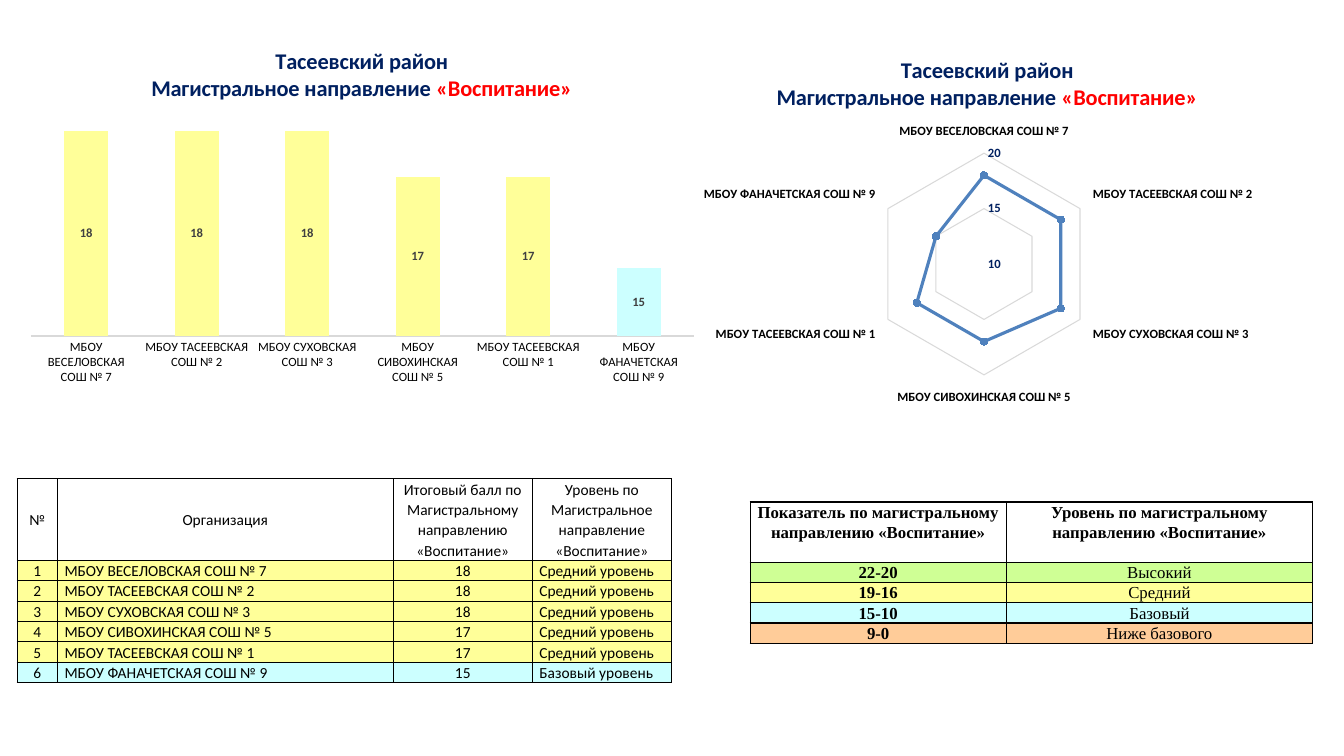
from lxml import etree
from pptx import Presentation
from pptx.chart.data import CategoryChartData
from pptx.dml.color import RGBColor
from pptx.enum import chart as ch, text
from pptx.oxml import parse_xml
from pptx.oxml.ns import nsdecls, qn
from pptx.util import Inches, Pt

YELLOW, CYAN, GREEN, ORANGE = "FFFF99", "CCFFFF", "CFFF95", "FFCC99"
NAVY, BLUE, GREY = "002060", "4F81BD", "D9D9D9"
SCHOOLS = [
    ("МБОУ ВЕСЕЛОВСКАЯ СОШ № 7", 18),
    ("МБОУ ТАСЕЕВСКАЯ СОШ № 2", 18),
    ("МБОУ СУХОВСКАЯ СОШ № 3", 18),
    ("МБОУ СИВОХИНСКАЯ СОШ № 5", 17),
    ("МБОУ ТАСЕЕВСКАЯ СОШ № 1", 17),
    ("МБОУ ФАНАЧЕТСКАЯ СОШ № 9", 15),
]
LEVELS = [("22-20", "Высокий", GREEN), ("19-16", "Средний", YELLOW),
          ("15-10", "Базовый", CYAN), ("9-0", "Ниже базового", ORANGE)]


def rgb(value):
    return RGBColor.from_string(value)


def level(score):
    return ("Средний уровень", YELLOW) if score >= 16 else ("Базовый уровень", CYAN)


def set_font(font, size, color, bold=False, name="Calibri"):
    font.size, font.bold, font.name = Pt(size), bold, name
    font.color.rgb = rgb(color)


def set_line(line, color, width):
    line.color.rgb = rgb(color)
    line.width = Pt(width)


def layout(x, y, w=None, h=None):
    target = '<c:layoutTarget val="inner"/>' if w else ""
    size = f'<c:w val="{w}"/><c:h val="{h}"/>' if w else ""
    return parse_xml(
        f'<c:layout {nsdecls("c")}><c:manualLayout>{target}'
        '<c:xMode val="edge"/><c:yMode val="edge"/>'
        f'<c:x val="{x}"/><c:y val="{y}"/>{size}</c:manualLayout></c:layout>')


def place(parent, before, element):
    for old in parent.findall(qn("c:layout")):
        parent.remove(old)
    if before is None:
        parent.insert(0, element)
    else:
        before.addnext(element)


def add_score_chart(s, kind, box, title_at, plot_box):
    data = CategoryChartData()
    data.categories = [name for name, _ in SCHOOLS]
    data.add_series("Балл", [score for _, score in SCHOOLS])
    chart = s.shapes.add_chart(kind, *map(Inches, box), data).chart
    set_font(chart.font, 10, "000000")
    chart.has_legend = False

    tf = chart.chart_title.text_frame
    lines = [[("Тасеевский район", NAVY)],
             [("Магистральное направление ", NAVY), ("«Воспитание»", "FF0000")]]
    for i, runs in enumerate(lines):
        p = tf.add_paragraph() if i else tf.paragraphs[0]
        p.alignment = text.PP_ALIGN.CENTER
        for words, color in runs:
            r = p.add_run()
            r.text = words
            set_font(r.font, 16, color, True)
    chart.chart_title.include_in_layout = False
    title = chart.chart_title._element
    place(title, title.find(qn("c:tx")), layout(*title_at))
    place(chart.plots[0]._element.getparent(), None, layout(*plot_box))

    axis = chart.category_axis
    axis.major_tick_mark = ch.XL_TICK_MARK.NONE
    axis.has_major_gridlines = False
    chart.value_axis.major_tick_mark = ch.XL_TICK_MARK.NONE
    return chart


def add_bars(s, box):
    chart = add_score_chart(s, ch.XL_CHART_TYPE.COLUMN_STACKED, box,
                            (0.19, 0.05), (0.02, 0.29, 0.96, 0.56))
    set_font(chart.category_axis.tick_labels.font, 9, "000000")
    set_line(chart.category_axis.format.line, GREY, 1)
    axis = chart.value_axis
    axis.minimum_scale, axis.maximum_scale = 13.5, 18
    axis.has_major_gridlines = False
    axis.visible = False
    plot = chart.plots[0]
    plot.gap_width, plot.overlap = 150, 100
    plot.vary_by_categories = False
    series = plot.series[0]
    for i, (_, score) in enumerate(SCHOOLS):
        fill = series.points[i].format.fill
        fill.solid()
        fill.fore_color.rgb = rgb(level(score)[1])
    labels = series.data_labels
    labels.show_value = True
    labels.position = ch.XL_LABEL_POSITION.CENTER
    set_font(labels.font, 9, "404040", True)


def add_radar(s, box):
    chart = add_score_chart(s, ch.XL_CHART_TYPE.RADAR_MARKERS, box,
                            (0.18, 0.05), (0.33, 0.3, 0.34, 0.55))
    set_font(chart.category_axis.tick_labels.font, 9, "000000", True)
    set_line(chart.category_axis.format.line, GREY, 0.75)
    axis = chart.value_axis
    axis.minimum_scale, axis.maximum_scale, axis.major_unit = 10, 20, 5
    axis.has_major_gridlines = True
    set_line(axis.major_gridlines.format.line, GREY, 0.75)
    axis.format.line.fill.background()
    set_font(axis.tick_labels.font, 9, NAVY, True)
    series = chart.plots[0].series[0]
    series.smooth = False
    set_line(series.format.line, BLUE, 2.25)
    marker = series.marker
    marker.style, marker.size = ch.XL_MARKER_STYLE.CIRCLE, 5
    marker.format.fill.solid()
    marker.format.fill.fore_color.rgb = rgb(BLUE)
    set_line(marker.format.line, BLUE, 0.75)


def add_borders(cell):
    tcPr = cell._tc.get_or_add_tcPr()
    for i, side in enumerate(("lnL", "lnR", "lnT", "lnB")):
        ln = etree.Element(qn(f"a:{side}"), w=str(Pt(1)))
        fill = etree.SubElement(ln, qn("a:solidFill"))
        etree.SubElement(fill, qn("a:srgbClr"), val="000000")
        tcPr.insert(i, ln)


def add_grid(s, box, widths, header_height, rows, fills, size, font, bold, centred, middle):
    table = s.shapes.add_table(len(rows), len(widths), *map(Inches, box)).table
    table.first_row = table.horz_banding = False
    for column, width in zip(table.columns, widths):
        column.width = Inches(width)
    for i, (values, color) in enumerate(zip(rows, fills)):
        table.rows[i].height = Inches(0.2 if i else header_height)
        for j, value in enumerate(values):
            cell = table.cell(i, j)
            cell.margin_left = cell.margin_right = Inches(0.07)
            cell.margin_top = cell.margin_bottom = 0
            if middle(i, j):
                cell.vertical_anchor = text.MSO_ANCHOR.MIDDLE
            if color:
                cell.fill.solid()
                cell.fill.fore_color.rgb = rgb(color)
            else:
                cell.fill.background()
            cell.text = value
            p = cell.text_frame.paragraphs[0]
            p.line_spacing = 1.07
            p.alignment = text.PP_ALIGN.CENTER if centred(i, j) else text.PP_ALIGN.LEFT
            set_font(p.font, size, "000000", bold(i, j), font)
            add_borders(cell)


def add_school_table(s, box):
    rows = [("№", "Организация", "Итоговый балл по Магистральному направлению «Воспитание»",
             "Уровень по Магистральное направление «Воспитание»")]
    rows += [(str(i), name, str(score), level(score)[0])
             for i, (name, score) in enumerate(SCHOOLS, 1)]
    fills = [None] + [level(score)[1] for _, score in SCHOOLS]
    add_grid(s, box, (0.4, 3.33, 1.38, 1.38), 0.81, rows, fills, 11, "Calibri",
             bold=lambda i, j: False,
             centred=lambda i, j: i == 0 or j in (0, 2),
             middle=lambda i, j: True)


def add_level_table(s, box):
    rows = [("Показатель по магистральному направлению «Воспитание»",
             "Уровень по магистральному направлению «Воспитание»")]
    rows += [(scores, name) for scores, name, _ in LEVELS]
    fills = [None] + [color for _, _, color in LEVELS]
    add_grid(s, box, (2.54, 3.04), 0.6, rows, fills, 12, "Times New Roman",
             bold=lambda i, j: i == 0 or j == 0,
             centred=lambda i, j: True,
             middle=lambda i, j: i > 0 and j == 0)


def main():
    prs = Presentation()
    prs.slide_width, prs.slide_height = Inches(13.33), Inches(7.5)
    s = prs.slides.add_slide(prs.slide_layouts[6])
    add_bars(s, (0.17, 0.25, 6.85, 3.63))
    add_school_table(s, (0.17, 4.75, 6.49, 2.01))
    add_radar(s, (6.5, 0.32, 6.52, 4))
    add_level_table(s, (7.44, 4.98, 5.58, 1.4))
    prs.save("out.pptx")


if __name__ == "__main__":
    main()
